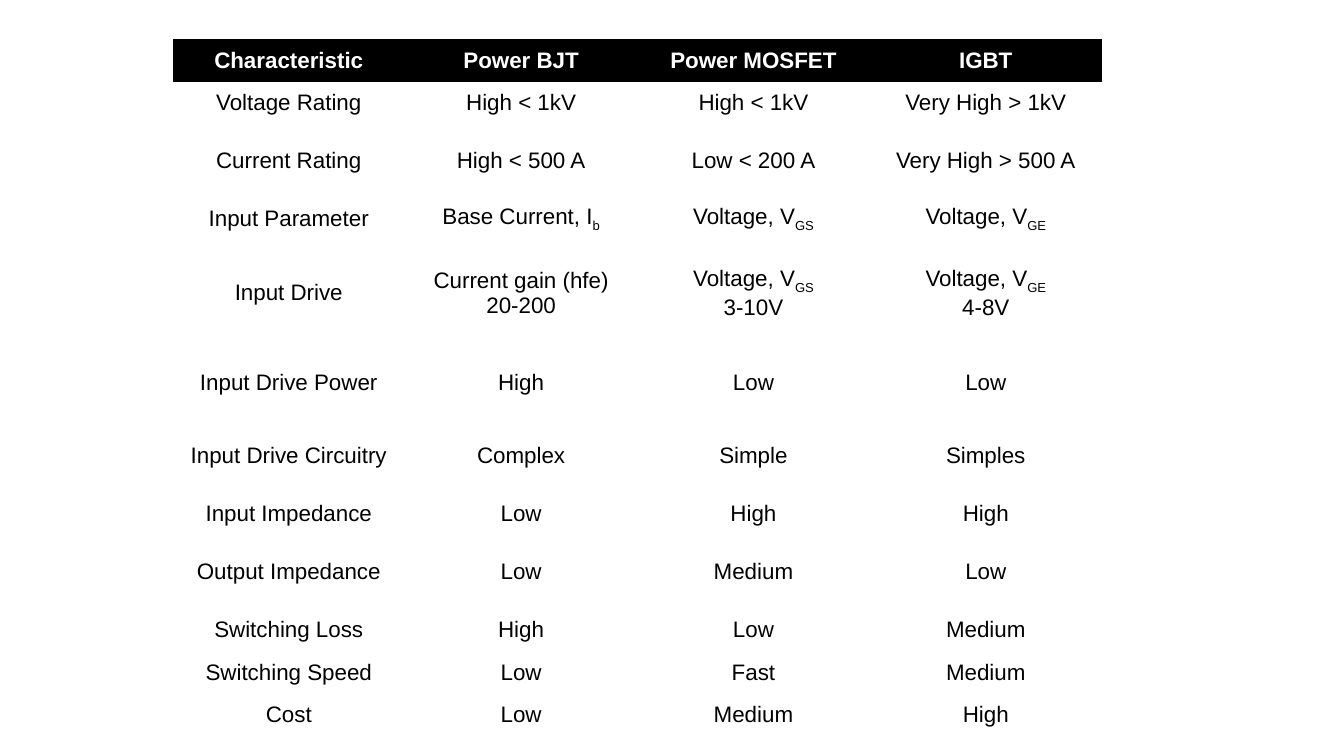
from pptx import Presentation
from pptx.dml.color import RGBColor
from pptx.enum.text import MSO_ANCHOR as ANCHOR, PP_ALIGN as ALIGN
from pptx.util import Cm, Pt


def rgb(value):
    return RGBColor.from_string(value)


def write(cell, text, size=16, font="Arial", color="000000", bold=False, fill="FFFFFF"):
    cell.fill.solid()
    cell.fill.fore_color.rgb = rgb(fill)
    cell.vertical_anchor = ANCHOR.MIDDLE
    cell.margin_left = cell.margin_right = Cm(0.18)
    cell.margin_top = cell.margin_bottom = Cm(0.1)
    tf = cell.text_frame
    for i, line in enumerate(text.split("\n")):
        p = tf.add_paragraph() if i else tf.paragraphs[0]
        p.alignment = ALIGN.CENTER
        for j, part in enumerate(line.split("_")):
            r = p.add_run()
            r.text = part
            r.font.size = Pt(size)
            r.font.name = font
            r.font.bold = bold
            r.font.color.rgb = rgb(color)
            if j:
                r._r.get_or_add_rPr().set("baseline", "-25000")


prs = Presentation()
prs.slide_width, prs.slide_height = Cm(33.87), Cm(19.05)
s = prs.slides.add_slide(prs.slide_layouts[6])

LOW, MID, HIGH = 1.07, 1.85, 2.67
rows = [
    (LOW, "Characteristic", "Power BJT", "Power MOSFET", "IGBT"),
    (LOW, "Voltage Rating", "High < 1kV", "High < 1kV", "Very High > 1kV"),
    (MID, "Current Rating", "High < 500 A", "Low < 200 A", "Very High > 500 A"),
    (LOW, "Input Parameter", "Base Current, I_b", "Voltage, V_GS", "Voltage, V_GE"),
    (HIGH, "Input Drive", "Current gain (hfe)\n20-200", "Voltage, V_GS\n3-10V", "Voltage, V_GE\n4-8V"),
    (MID, "Input Drive Power", "High", "Low", "Low"),
    (MID, "Input Drive Circuitry", "Complex", "Simple", "Simples"),
    (LOW, "Input Impedance", "Low", "High", "High"),
    (MID, "Output Impedance", "Low", "Medium", "Low"),
    (LOW, "Switching Loss", "High", "Low", "Medium"),
    (LOW, "Switching Speed", "Low", "Fast", "Medium"),
    (LOW, "Cost", "Low", "Medium", "High"),
]

height = sum(row[0] for row in rows)
table = s.shapes.add_table(len(rows), 4, Cm(4.35), Cm(0.99), Cm(23.42), Cm(height)).table
table.horz_banding = False
table._tbl.tblPr[0].text = "{2D5ABB26-0587-4C30-8999-92F81FD0307C}"

for i, (row_height, *texts) in enumerate(rows):
    table.rows[i].height = Cm(row_height)
    look = {} if i else {"color": "FFFFFF", "bold": True, "fill": "000000"}
    for j, text in enumerate(texts):
        write(table.cell(i, j), text, **look)

prs.save("out.pptx")
